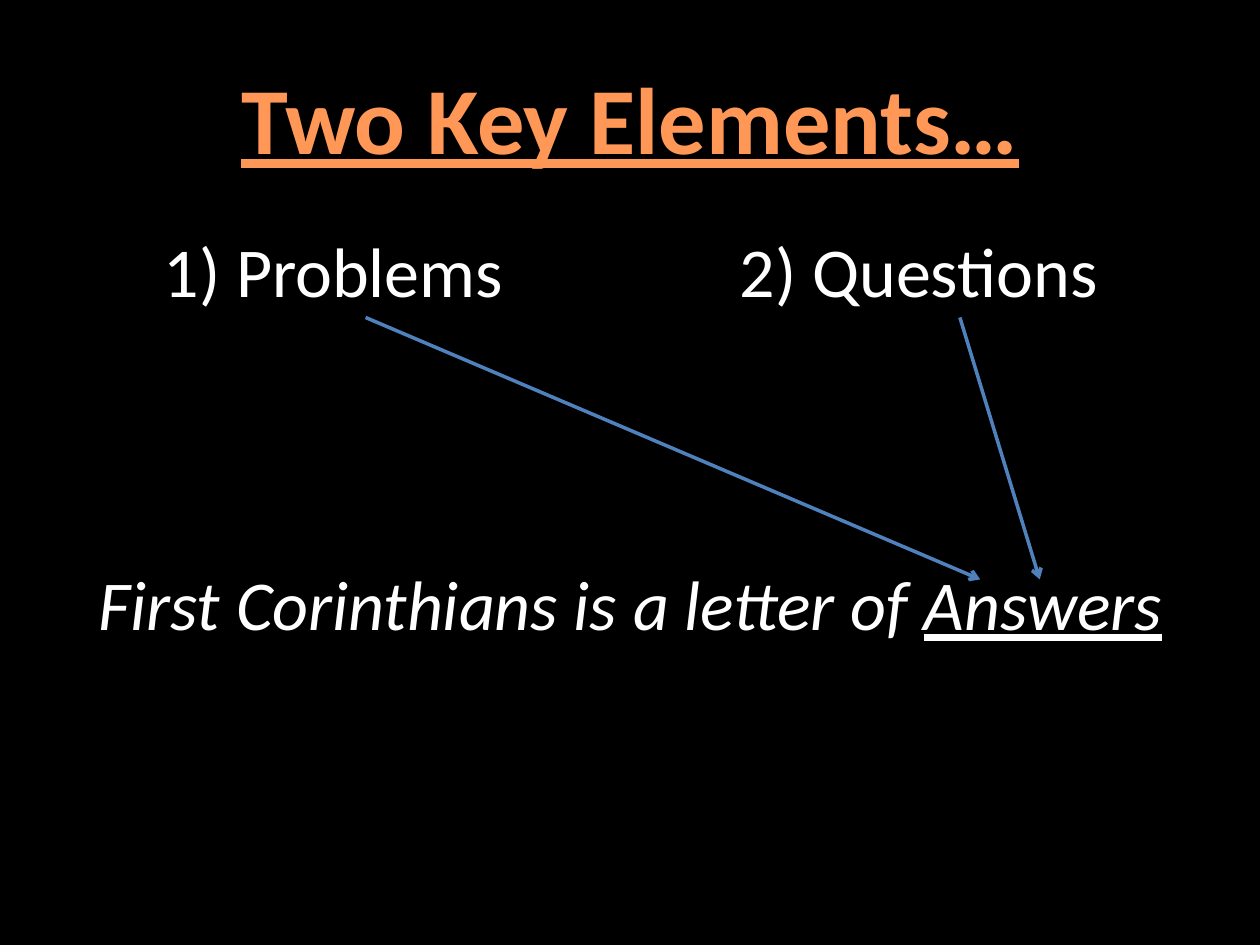
import pptx
import pptx.dml.color
import pptx.enum.shapes
import pptx.enum.text
import pptx.oxml
import pptx.oxml.ns
import pptx.util
from pptx.util import Cm

COLORS = {"background": "000000", "title": "FF9856", "text": "FFFFFF", "arrow": "4F81BD"}
FONT = "Calibri"


def rgb(name):
    return pptx.dml.color.RGBColor.from_string(COLORS[name])


def place(shape, left, top, width, height):
    shape.left, shape.top = Cm(left), Cm(top)
    shape.width, shape.height = Cm(width), Cm(height)


def write(paragraph, text, color="text", size=40, bold=False, italic=False, underline=False):
    run = paragraph.add_run()
    run.text = text
    font = run.font
    font.name, font.size = FONT, pptx.util.Pt(size)
    font.bold, font.italic, font.underline = bold, italic, underline
    font.color.rgb = rgb(color)


def centered_paragraph(shape, anchor=pptx.enum.text.MSO_ANCHOR.TOP):
    """Prepare the text frame of shape and return its centred first paragraph."""
    frame = shape.text_frame
    frame.word_wrap = True
    frame.auto_size = pptx.enum.text.MSO_AUTO_SIZE.NONE
    frame.vertical_anchor = anchor
    paragraph = frame.paragraphs[0]
    paragraph.alignment = pptx.enum.text.PP_ALIGN.CENTER
    return paragraph


def remove_bullet(paragraph):
    properties = paragraph._p.get_or_add_pPr()
    properties.set("marL", "0")
    properties.set("indent", "0")
    pptx.oxml.ns.qn("a:buNone")
    properties.append(pptx.oxml.parse_xml(f"<a:buNone {pptx.oxml.ns.nsdecls('a')}/>"))


def add_arrow(slide, start, end):
    arrow = slide.shapes.add_connector(
        pptx.enum.shapes.MSO_CONNECTOR.STRAIGHT, *map(Cm, start + end))
    arrow.line.color.rgb = rgb("arrow")
    arrow.line.width = pptx.util.Pt(2)
    namespace = pptx.oxml.ns.nsdecls("a")
    arrow.line._get_or_add_ln().append(
        pptx.oxml.parse_xml(f'<a:tailEnd {namespace} type="arrow"/>'))
    arrow._element.spPr.append(pptx.oxml.parse_xml(f"<a:effectLst {namespace}/>"))


def main():
    presentation = pptx.Presentation()
    presentation.slide_width, presentation.slide_height = Cm(25.4), Cm(19.05)
    slide = presentation.slides.add_slide(
        presentation.slide_layouts.get_by_name("Two Content"))
    slide.background.fill.solid()
    slide.background.fill.fore_color.rgb = rgb("background")

    title, problems, questions = list(slide.placeholders)[:3]
    place(title, 1.27, 0.76, 22.86, 3.18)
    write(centered_paragraph(title, pptx.enum.text.MSO_ANCHOR.MIDDLE), "Two Key Elements…",
          color="title", size=54, bold=True, underline=True)

    elements = ((problems, 1.27, "1) Problems "), (questions, 12.91, "2) Questions"))
    for element, left, text in elements:
        place(element, left, 4.45, 11.22, 2.86)
        paragraph = centered_paragraph(element)
        remove_bullet(paragraph)
        write(paragraph, text)

    for unused in list(slide.placeholders)[3:]:
        unused._element.getparent().remove(unused._element)

    summary = slide.shapes.add_textbox(Cm(1.27), Cm(11.18), Cm(22.86), Cm(1.96))
    paragraph = centered_paragraph(summary)
    write(paragraph, "First Corinthians is a letter of ", italic=True)
    write(paragraph, "Answers", italic=True, underline=True)

    add_arrow(slide, (7.37, 6.4), (19.76, 11.68))
    add_arrow(slide, (19.35, 6.4), (20.96, 11.68))

    presentation.save("out.pptx")


if __name__ == "__main__":
    main()
